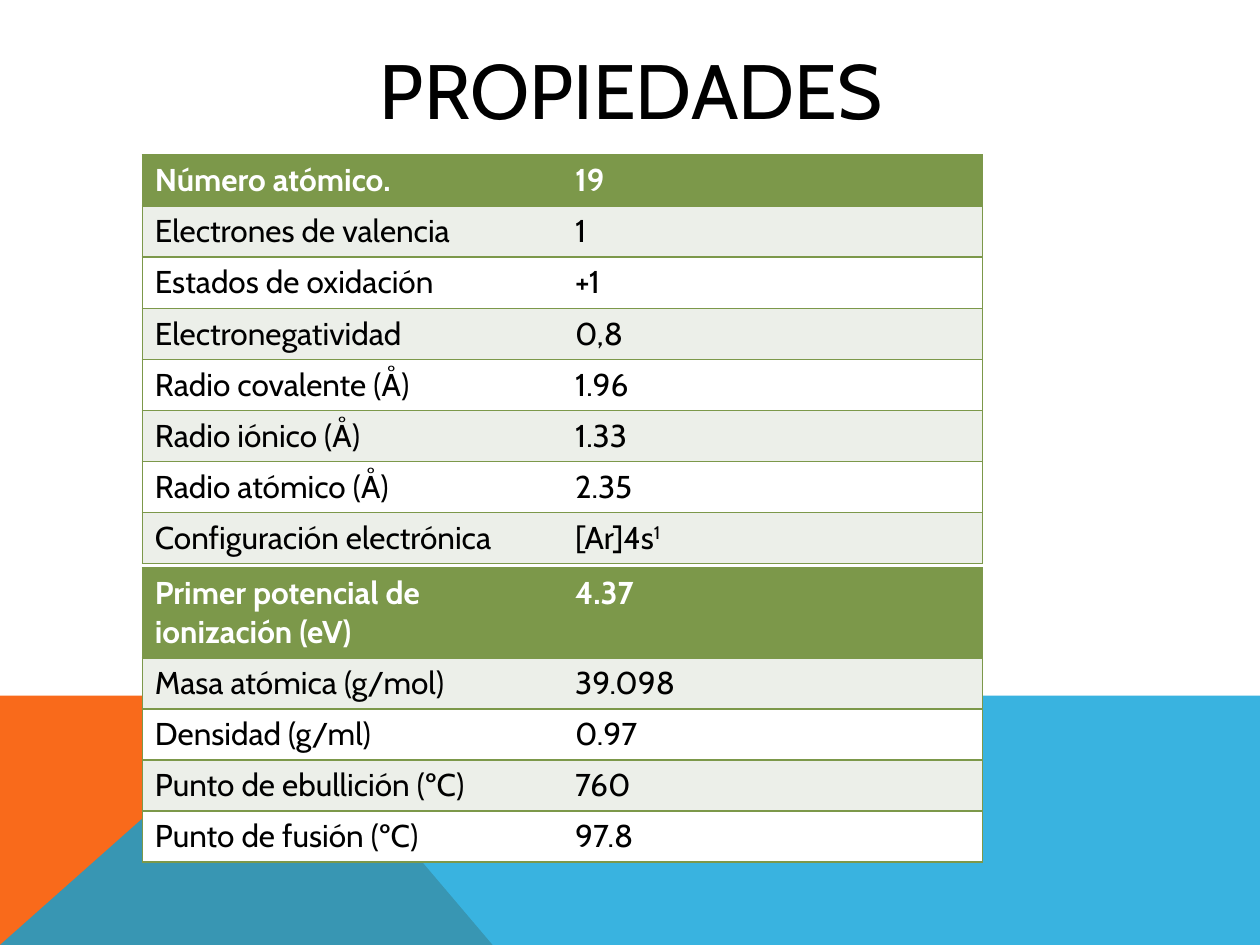
from dataclasses import dataclass

from lxml import etree
from pptx import Presentation
from pptx.dml.color import RGBColor
from pptx.enum.text import MSO_ANCHOR, PP_ALIGN
from pptx.oxml.ns import qn
from pptx.util import Inches, Pt

CENTER = PP_ALIGN.CENTER
MIDDLE = MSO_ANCHOR.MIDDLE
TITLE_ONLY = 5


@dataclass(frozen=True)
class Theme:
    font: str = "Cabin"
    head: int = 44
    body: int = 18
    ink: str = "000000"
    paper: str = "FFFFFF"
    green: str = "7C984A"
    pale: str = "ECEFE9"
    orange: str = "F96A1B"
    blue: str = "08A1D9"


THEME = Theme()

BASICS = [
    ("Número atómico.", "19"),
    ("Electrones de valencia", "1"),
    ("Estados de oxidación", "+1"),
    ("Electronegatividad", "0,8"),
    ("Radio covalente (Å)", "1.96"),
    ("Radio iónico (Å)", "1.33"),
    ("Radio atómico (Å)", "2.35"),
    ("Configuración electrónica", "[Ar]4s^1"),
]
PHYSICS = [
    ("Primer potencial de ionización (eV)", "4.37"),
    ("Masa atómica (g/mol)", "39.098"),
    ("Densidad (g/ml)", "0.97"),
    ("Punto de ebullición (ºC)", "760"),
    ("Punto de fusión (ºC)", "97.8"),
]
ROW = 3.24 / len(BASICS)


def style(font, color, **form):
    form = {"name": THEME.font, "bold": False, **form}
    for key, value in form.items():
        setattr(font, key, value)
    font.color.rgb = RGBColor.from_string(color)


def add_title(slide, text, box):
    title = slide.shapes.title
    for key, value in zip(("left", "top", "width", "height"), box):
        setattr(title, key, Inches(value))
    frame = title.text_frame
    frame.text = text
    frame.vertical_anchor = MIDDLE
    para = frame.paragraphs[0]
    para.alignment = CENTER
    style(para.runs[0].font, THEME.ink, size=Pt(THEME.head))


def add_shard(slide, box, spots, color, alpha=None):
    left, top, width, height = box
    points = [(Inches(left + x * width), Inches(top + y * height)) for x, y in spots]
    pen = slide.shapes.build_freeform(*points[0])
    pen.add_line_segments(points[1:], close=True)
    shard = pen.convert_to_shape()
    shard.shadow.inherit = False
    shard.fill.solid()
    shard.fill.fore_color.rgb = RGBColor.from_string(color)
    shard.line.fill.background()
    if alpha:
        tint = shard.fill._xPr.find(qn("a:solidFill"))[0]
        etree.SubElement(tint, qn("a:alpha"), val=str(alpha * 1000))


def add_base(slide, box):
    left, top, width, height = box
    bend = 2.23 / width
    peak = 3.91 / width
    add_shard(slide, box, [(0, 1), (0, 0), (bend, 0), (peak, 1)], THEME.orange)
    add_shard(slide, box, [(0, 1), (bend, 0), (1, 0), (1, 1)], THEME.blue, 80)


def add_edges(cell, sides):
    props = cell._tc.get_or_add_tcPr()
    for spot, side in enumerate("LRTB"):
        line = etree.Element(qn("a:ln" + side), w=str(Pt(1)))
        if side in sides:
            fill = etree.SubElement(line, qn("a:solidFill"))
            etree.SubElement(fill, qn("a:srgbClr"), val=THEME.green)
        else:
            etree.SubElement(line, qn("a:noFill"))
        props.insert(spot, line)


def fill_cell(cell, text, row, sides):
    back = THEME.pale if row % 2 else THEME.paper
    cell.fill.solid()
    cell.fill.fore_color.rgb = RGBColor.from_string(back if row else THEME.green)
    add_edges(cell, sides)
    main, _, power = text.partition("^")
    para = cell.text_frame.paragraphs[0]
    for part in filter(None, (main, power)):
        run = para.add_run()
        run.text = part
        color = THEME.ink if row else THEME.paper
        style(run.font, color, size=Pt(THEME.body), bold=row == 0)
        if part is power:
            run._r.get_or_add_rPr().set("baseline", "30000")


def add_grid(slide, rows, box):
    left, top, width, height = box
    frame = slide.shapes.add_table(len(rows), 2, *map(Inches, box))
    table = frame.table
    for col in table.columns:
        col.width = Inches(width / 2)
    for row, pair in enumerate(rows):
        rest = height - ROW * (len(rows) - 1)
        table.rows[row].height = Inches(ROW if row else rest)
        for col, text in enumerate(pair):
            fill_cell(table.cell(row, col), text, row, "TB" + "LR"[col])


def main():
    deck = Presentation()
    deck.slide_width = Inches(10)
    deck.slide_height = Inches(7.5)
    slide = deck.slides.add_slide(deck.slide_layouts[TITLE_ONLY])
    add_base(slide, (0, 5.52, 10, 1.98))
    add_title(slide, "PROPIEDADES", (0.9, 0.4, 8.22, 0.6))
    add_grid(slide, BASICS, (1.13, 1.23, 6.67, 3.24))
    add_grid(slide, PHYSICS, (1.13, 4.51, 6.67, 2.32))
    deck.save("out.pptx")


if __name__ == "__main__":
    main()
